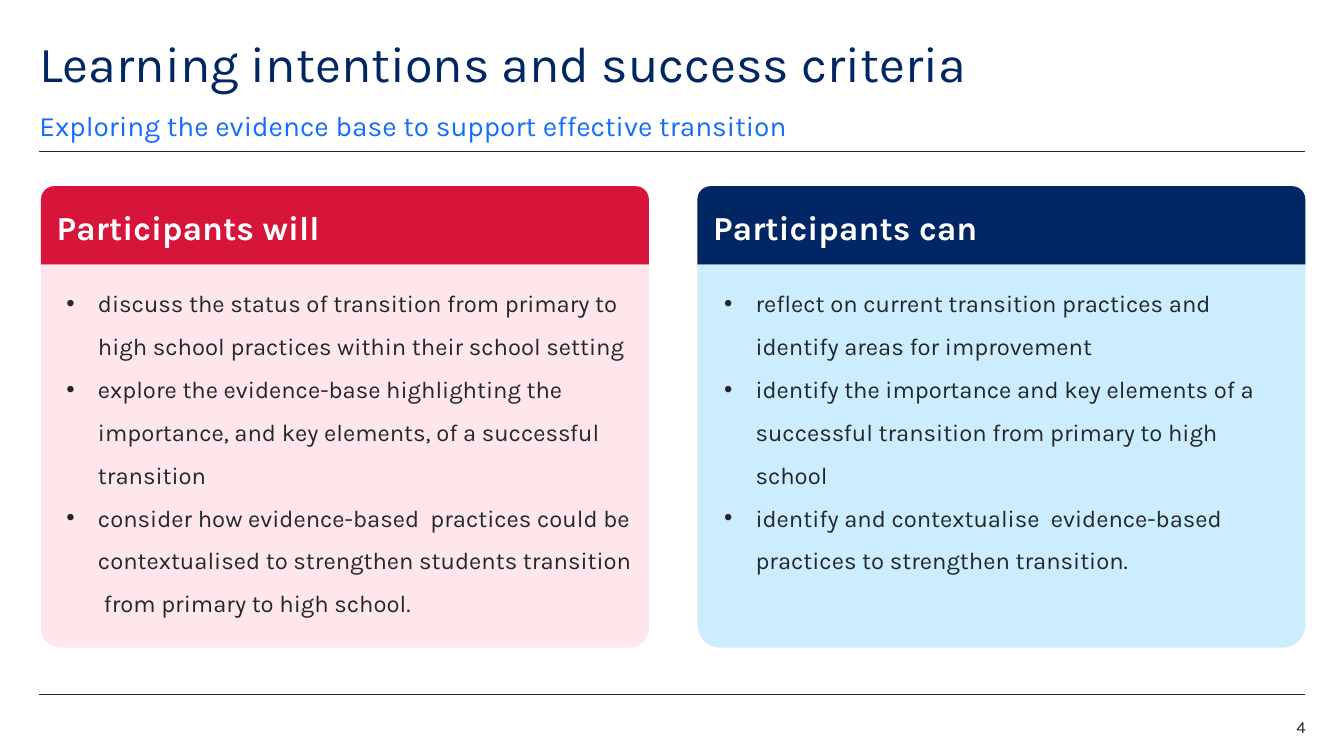
from dataclasses import dataclass

from lxml.etree import SubElement
from pptx import Presentation
from pptx.dml.color import RGBColor
from pptx.enum.shapes import MSO_CONNECTOR, MSO_SHAPE
from pptx.enum.text import MSO_ANCHOR, PP_ALIGN
from pptx.oxml.ns import qn
from pptx.util import Pt

NAVY, BLUE, INK, WHITE = "002664", "146CFD", "22272B", "FFFFFF"
LEFT, RIGHT = 28.1, 932.4
CARD_W, CARD_TOP, HEAD_H, BODY_H = 434.2, 133, 56, 273.6


@dataclass
class Label:
    text: str
    box: tuple[float, float, float, float]
    size: float
    color: str
    anchor: MSO_ANCHOR
    spacing: dict


@dataclass
class Card:
    left: float
    heading: str
    head_fill: str
    body_fill: str
    radius: float
    points: list[str]


LABELS = [
    Label("Learning intentions and success criteria", (LEFT, 28.1, 793.4, 43.2), 36, NAVY,
          MSO_ANCHOR.TOP, {"line_spacing": 0.9}),
    Label("Exploring the evidence base to support effective transition",
          (LEFT, 77, 793.4, 24.5), 20, BLUE, MSO_ANCHOR.BOTTOM,
          {"line_spacing": 1.4, "space_after": Pt(12)}),
    Label("4", (876, 513.4, 56.6, 14.4), 12, INK, MSO_ANCHOR.TOP,
          {"line_spacing": 0.9, "space_after": Pt(6), "alignment": PP_ALIGN.RIGHT}),
]

CARDS = [
    Card(29.3, "Participants will", "D7153A", "FFE6EA", 0.05, [
        "discuss the status of transition from primary to high school practices within their "
        "school setting",
        "explore the evidence-base highlighting the importance, and key elements, of a "
        "successful transition",
        "consider how evidence-based  practices could be contextualised to strengthen "
        "students transition  from primary to high school.",
    ]),
    Card(RIGHT - CARD_W, "Participants can", NAVY, "CBEDFD", 0.06, [
        "reflect on current transition practices and identify areas for improvement",
        "identify the importance and key elements of a successful transition from primary to "
        "high school",
        "identify and contextualise  evidence-based practices to strengthen transition.",
    ]),
]


def paint(color_format, color: str) -> None:
    """Set a colour from its hex string."""
    color_format.rgb = RGBColor.from_string(color)


def apply(target, values: dict) -> None:
    """Set every attribute named in the format values."""
    for name, value in values.items():
        setattr(target, name, value)


def set_frame(tf, insets: tuple[float, float, float, float], anchor: MSO_ANCHOR) -> None:
    """Turn on wrapping and set the insets and anchor."""
    sides = ("margin_left", "margin_top", "margin_right", "margin_bottom")
    apply(tf, dict(zip(sides, map(Pt, insets))))
    apply(tf, {"word_wrap": True, "vertical_anchor": anchor})


def write(p, text: str, size: float, color: str, bold: bool = False) -> None:
    """Fill a paragraph with one formatted run."""
    r = p.add_run()
    r.text = text
    apply(r.font, {"name": "Karla", "size": Pt(size), "bold": bold})
    paint(r.font.color, color)


def add_rule(slide, y: float) -> None:
    """Draw a thin line across the content width."""
    line = slide.shapes.add_connector(MSO_CONNECTOR.STRAIGHT, Pt(LEFT), Pt(y), Pt(RIGHT), Pt(y))
    line.line.width = Pt(0.5)
    paint(line.line.color, INK)
    SubElement(line._element.spPr, qn("a:effectLst"))


def add_label(slide, label: Label) -> None:
    """Place one line of plain text."""
    tf = slide.shapes.add_textbox(*map(Pt, label.box)).text_frame
    set_frame(tf, (0, 0, 0, 0), label.anchor)
    apply(tf.paragraphs[0], label.spacing)
    write(tf.paragraphs[0], label.text, label.size, label.color)


def add_panel(slide, left: float, top: float, height: float, fill: str):
    """Draw a borderless panel with two rounded corners."""
    sp = slide.shapes.add_shape(MSO_SHAPE.ROUND_2_SAME_RECTANGLE,
                                Pt(left), Pt(top), Pt(CARD_W), Pt(height))
    sp.shadow.inherit = False
    sp.fill.solid()
    paint(sp.fill.fore_color, fill)
    sp.line.fill.background()
    return sp


def add_bullet(p) -> None:
    """Give a paragraph a hanging bullet."""
    pPr = p._p.get_or_add_pPr()
    pPr.set("marL", str(Pt(22.5)))
    pPr.set("indent", str(Pt(-22.5)))
    SubElement(pPr, qn("a:buFont"), typeface="Arial")
    SubElement(pPr, qn("a:buChar"), char="•")


def add_card(slide, card: Card) -> None:
    """Draw a heading panel above its list of points."""
    tf = add_panel(slide, card.left, CARD_TOP, HEAD_H, card.head_fill).text_frame
    set_frame(tf, (8.5, 8.5, 8.5, 8.5), MSO_ANCHOR.MIDDLE)
    tf.paragraphs[0].alignment = PP_ALIGN.LEFT
    write(tf.paragraphs[0], card.heading, 24, WHITE, True)

    body = add_panel(slide, card.left, CARD_TOP + HEAD_H, BODY_H, card.body_fill)
    body.adjustments[0], body.adjustments[1] = 0, card.radius
    tf = body.text_frame
    set_frame(tf, (14.2, 7.2, 5.7, 5.7), MSO_ANCHOR.TOP)
    for i, point in enumerate(card.points):
        p = tf.add_paragraph() if i else tf.paragraphs[0]
        add_bullet(p)
        apply(p, {"alignment": PP_ALIGN.LEFT, "line_spacing": 1.5})
        write(p, point, 17, INK)


def main() -> None:
    """Build the slide and save it."""
    prs = Presentation()
    apply(prs, {"slide_width": Pt(960), "slide_height": Pt(540)})
    slide = prs.slides.add_slide(prs.slide_layouts[6])
    for y in (108, 496):
        add_rule(slide, y)
    for label in LABELS:
        add_label(slide, label)
    for card in CARDS:
        add_card(slide, card)
    prs.save("out.pptx")


if __name__ == "__main__":
    main()
